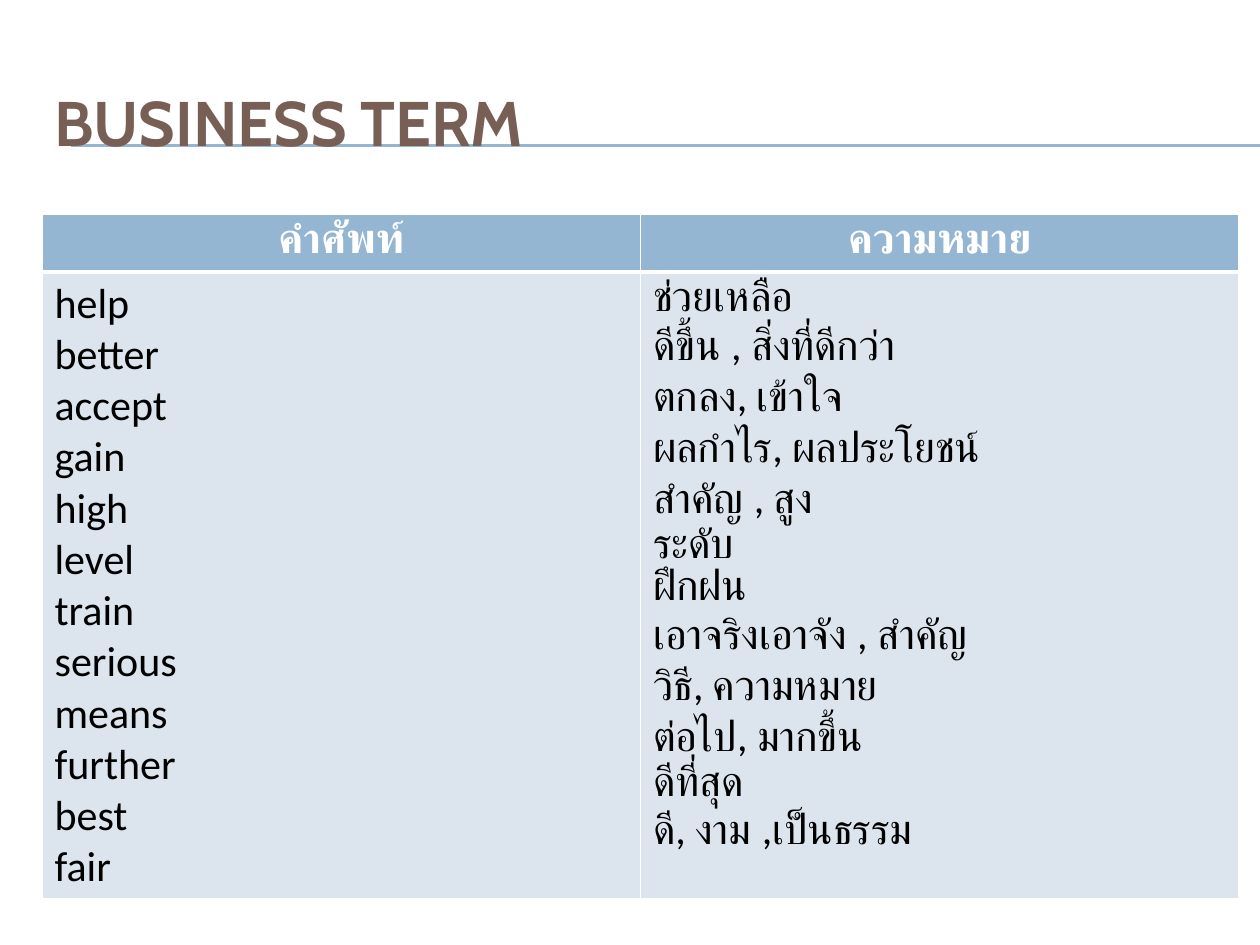
"""Build a slide with a two-column vocabulary table of business terms."""
from dataclasses import dataclass

from lxml.etree import SubElement
from pptx import Presentation
from pptx.dml.color import RGBColor
from pptx.enum.shapes import MSO_CONNECTOR
from pptx.enum.text import MSO_ANCHOR, PP_ALIGN
from pptx.oxml.ns import qn
from pptx.util import Pt

EMU_PER_PX = 914400 / 126
COLORS = {
    "rule": "94B6D2",
    "title": "775F55",
    "header": "94B6D2",
    "body": "DCE5EE",
    "white": "FFFFFF",
    "black": "000000",
}


@dataclass(frozen=True)
class Column:
    heading: str
    words: tuple[str, ...]


@dataclass(frozen=True)
class CellStyle:
    fill: str
    text: str
    bold: bool
    alignment: PP_ALIGN
    line_spacing: float
    borders: dict[str, int]


COLUMNS = (
    Column("คำศัพท์", (
        "help", "better", "accept", "gain", "high", "level",
        "train", "serious", "means", "further", "best", "fair",
    )),
    Column("ความหมาย", (
        "ช่วยเหลือ", "ดีขึ้น , สิ่งที่ดีกว่า", "ตกลง, เข้าใจ",
        "ผลกำไร, ผลประโยชน์", "สำคัญ , สูง", "ระดับ",
        "ฝึกฝน", "เอาจริงเอาจัง , สำคัญ", "วิธี, ความหมาย",
        "ต่อไป, มากขึ้น", "ดีที่สุด", "ดี, งาม ,เป็นธรรม",
    )),
)
HEADER = CellStyle("header", "white", True, PP_ALIGN.CENTER, 1.15,
                   {"lnL": 1, "lnR": 1, "lnT": 1, "lnB": 3})
BODY = CellStyle("body", "black", False, PP_ALIGN.LEFT, 1.0,
                 {"lnL": 1, "lnR": 1, "lnT": 3, "lnB": 1})
ROW_HEIGHTS = (51, 627)
RULE_TOPS = (145, 146)


def px(length: int) -> int:
    """Convert pixels to EMU."""
    return round(length * EMU_PER_PX)


def color(name: str) -> RGBColor:
    """Look up a named color."""
    return RGBColor.from_string(COLORS[name])


def add_rule(slide, top: int) -> None:
    """Draw a thin rule running to the right edge."""
    rule = slide.shapes.add_connector(
        MSO_CONNECTOR.STRAIGHT, px(71), px(top), px(1260), px(top))
    rule.line.color.rgb = color("rule")
    rule.line.width = Pt(0.75)
    SubElement(rule._element.spPr, qn("a:effectLst"))


def add_title(slide, text: str) -> None:
    """Add the slide title."""
    shape = slide.shapes.add_textbox(px(42), px(63), px(1197), px(116))
    frame = shape.text_frame
    frame.word_wrap = True
    frame.vertical_anchor = MSO_ANCHOR.MIDDLE
    paragraph = frame.paragraphs[0]
    paragraph.text = text
    paragraph.font.name = "Cabin"
    paragraph.font.size = Pt(36)
    paragraph.font.bold = True
    paragraph.font.color.rgb = color("title")


def set_borders(cell, borders: dict[str, int]) -> None:
    """Give a cell white borders of the stated point widths."""
    properties = cell._tc.get_or_add_tcPr()
    for side, width in borders.items():
        line = SubElement(properties, qn(f"a:{side}"), w=str(Pt(width)))
        fill = SubElement(line, qn("a:solidFill"))
        SubElement(fill, qn("a:srgbClr"), val=COLORS["white"])


def fill_cell(cell, lines: tuple[str, ...], style: CellStyle) -> None:
    """Write one paragraph per line and style the cell."""
    set_borders(cell, style.borders)
    cell.fill.solid()
    cell.fill.fore_color.rgb = color(style.fill)
    cell.text = "\n".join(lines)
    for paragraph in cell.text_frame.paragraphs:
        paragraph.alignment = style.alignment
        paragraph.line_spacing = style.line_spacing
        paragraph.font.name = "Calibri"
        paragraph.font.size = Pt(24)
        paragraph.font.bold = style.bold
        paragraph.font.color.rgb = color(style.text)


def add_vocabulary(slide, columns: tuple[Column, ...]) -> None:
    """Add the table of words and meanings."""
    table = slide.shapes.add_table(
        len(ROW_HEIGHTS), len(columns),
        px(42), px(214), px(1197), px(sum(ROW_HEIGHTS))).table
    for row, height in zip(table.rows, ROW_HEIGHTS):
        row.height = px(height)
    for index, column in enumerate(columns):
        heading = table.cell(0, index)
        heading.margin_left = heading.margin_right = px(9)
        heading.margin_top = heading.margin_bottom = 0
        fill_cell(heading, (column.heading,), HEADER)
        fill_cell(table.cell(1, index), column.words, BODY)


def main() -> None:
    """Build and save the presentation."""
    presentation = Presentation()
    presentation.slide_width = px(1260)
    presentation.slide_height = px(945)
    slide = presentation.slides.add_slide(presentation.slide_layouts[6])
    for top in RULE_TOPS:
        add_rule(slide, top)
    add_title(slide, "BUSINESS TERM")
    add_vocabulary(slide, COLUMNS)
    presentation.save("out.pptx")


if __name__ == "__main__":
    main()
